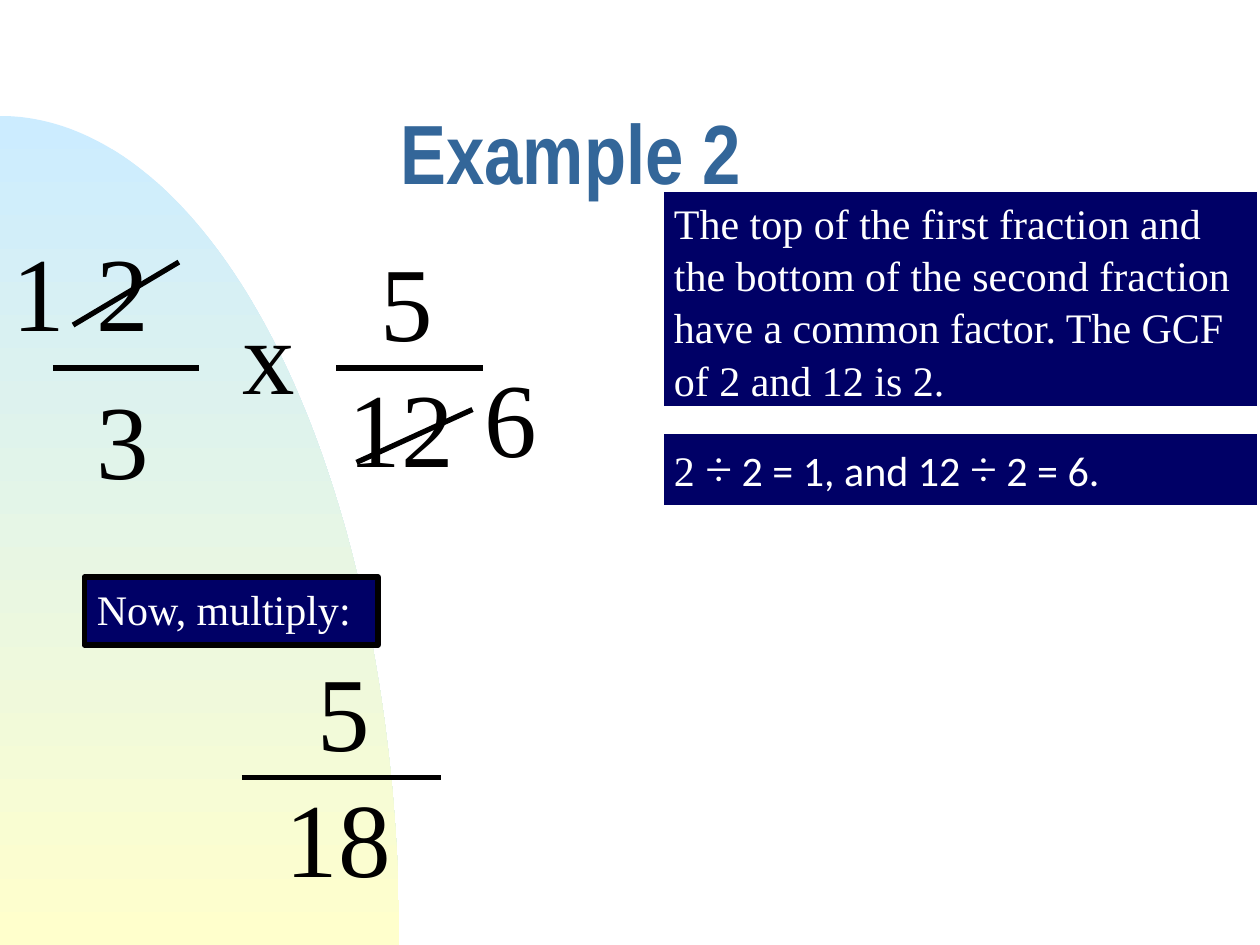
from math import cos, pi, sin

from lxml import etree
from pptx import Presentation
from pptx.dml.color import RGBColor
from pptx.enum.shapes import MSO_CONNECTOR, MSO_SHAPE
from pptx.enum.text import MSO_ANCHOR, MSO_AUTO_SIZE, PP_ALIGN
from pptx.oxml.ns import qn
from pptx.util import Inches, Pt

STRAIGHT = MSO_CONNECTOR.STRAIGHT
RECTANGLE = MSO_SHAPE.RECTANGLE
TOP, MIDDLE = MSO_ANCHOR.TOP, MSO_ANCHOR.MIDDLE
FIT = MSO_AUTO_SIZE.SHAPE_TO_FIT_TEXT
LEFT = PP_ALIGN.LEFT

SERIF = "Times New Roman"
INK, NAVY, WHITE = "010000", "000066", "FFFFFF"


def rgb(color):
    return RGBColor.from_string(color)


def write(frame, pieces, color):
    """Fill a frame with one paragraph of (text, size, font) pieces."""
    frame.word_wrap = True
    frame.auto_size = FIT
    frame.vertical_anchor = TOP
    paragraph = frame.paragraphs[0]
    paragraph.alignment = LEFT
    paragraph.space_before = Pt(pieces[0][1] / 10)
    for text, size, font in pieces:
        run = paragraph.add_run()
        run.text = text
        run.font.size = Pt(size)
        run.font.name = font
        run.font.color.rgb = rgb(color)


prs = Presentation()
prs.slide_width, prs.slide_height = Inches(10), Inches(7.5)
slide = prs.slides.add_slide(prs.slide_layouts[6])
shapes = slide.shapes

# Quarter ellipse in the lower left corner
arc_width, arc_height, steps = 3.17, 6.58, 90
arc = []
for step in range(steps + 1):
    angle = pi / 2 * step / steps
    arc.append((Inches(arc_width * sin(angle)),
                Inches(7.5 - arc_height * cos(angle))))
builder = shapes.build_freeform(*arc[0])
builder.add_line_segments(arc[1:] + [(0, Inches(7.5))], close=True)
backdrop = builder.convert_to_shape()
backdrop.shadow.inherit = False
backdrop.line.fill.background()
backdrop.fill.gradient()
backdrop.fill.gradient_angle = 270
for stop, color in zip(backdrop.fill.gradient_stops, ("CCECFF", "FFFFCC")):
    stop.color.rgb = rgb(color)

# Title
title = shapes.add_textbox(Inches(3.08), Inches(0.67), Inches(6.67), Inches(1.25))
title.text_frame.word_wrap = True
title.text_frame.vertical_anchor = MIDDLE
heading = title.text_frame.paragraphs[0]
heading.text = "Example 2"
heading.line_spacing = 0.7
heading.font.size = Pt(48)
heading.font.name = "Arial Narrow"
heading.font.bold = True
heading.font.color.rgb = rgb("336699")

# Numbers of the fractions: text, left, top, width
numbers = [
    ("2", 0.67, 1.75, 0.75),
    ("3", 0.67, 2.92, 0.83),
    ("x", 1.83, 2.25, 0.75),
    ("5", 2.92, 1.83, 0.67),
    ("12", 2.67, 2.83, 1.08),
    ("1", 0, 1.75, 0.42),
    ("6", 3.75, 2.75, 0.75),
    ("5", 2.42, 5.08, 0.67),
    ("18", 2.17, 6.08, 1.67),
]
for text, left, top, width in numbers:
    number = shapes.add_textbox(Inches(left), Inches(top), Inches(width), Inches(1.1))
    write(number.text_frame, [(text, 60, SERIF)], INK)

# Notes: left, top, width, height, outline, line spacing, pieces
notes = [
    (5.25, 1.5, 4.75, 1.74, WHITE, 1.04,
     [("The top of the first fraction and the bottom of the second fraction "
       "have a common factor. The GCF of 2 and 12 is 2.", 24, SERIF)]),
    (5.25, 3.42, 4.75, 0.61, WHITE, 1.0,
     [("2 ", 24, SERIF), ("÷", 28, SERIF), (" 2 = 1, and 12 ", 24, "Calibri"),
      ("÷", 28, SERIF), (" 2 = 6.", 24, "Calibri")]),
    (0.67, 4.58, 2.33, 0.54, INK, 1.0, [("Now, multiply:", 24, SERIF)]),
]
for left, top, width, height, outline, spacing, pieces in notes:
    note = shapes.add_shape(RECTANGLE, Inches(left), Inches(top),
                            Inches(width), Inches(height))
    note.shadow.inherit = False
    note.fill.solid()
    note.fill.fore_color.rgb = rgb(NAVY)
    note.line.color.rgb = rgb(outline)
    note.line.width = Pt(3)
    write(note.text_frame, pieces, WHITE)
    note.text_frame.paragraphs[0].line_spacing = spacing

# Fraction bars, then the strokes that cancel 2 and 12
strokes = [
    (0.42, 2.92, 1.58, 2.92),
    (2.67, 2.92, 3.83, 2.92),
    (1.92, 6.17, 3.5, 6.17),
    (0.58, 2.58, 1.42, 2.08),
    (2.83, 3.67, 3.75, 3.25),
]
for ends in strokes:
    stroke = shapes.add_connector(STRAIGHT, *[Inches(end) for end in ends])
    stroke.line.color.rgb = rgb(INK)
    stroke.line.width = Pt(3)
    etree.SubElement(stroke._element.spPr, qn("a:effectLst"))

prs.save("out.pptx")
